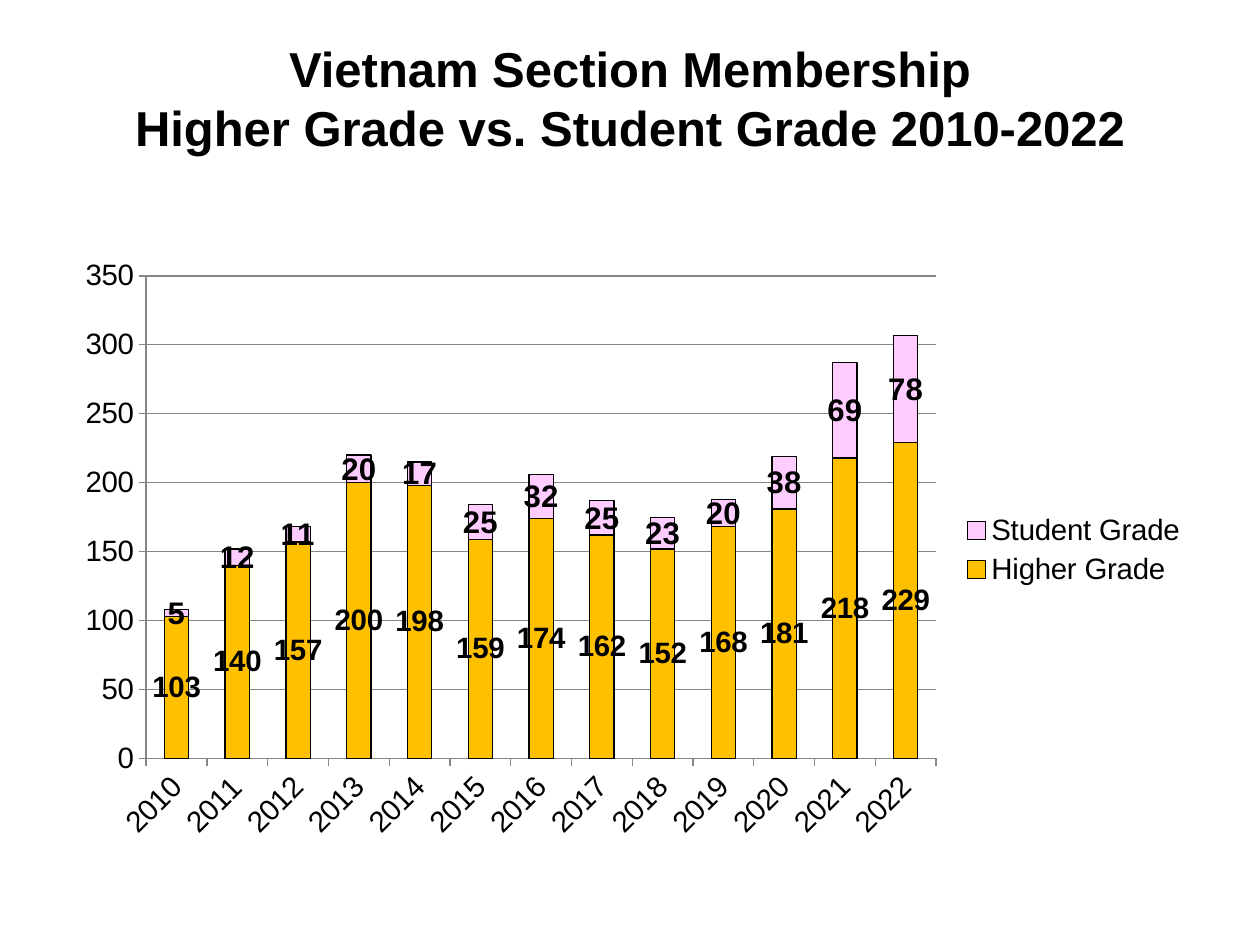
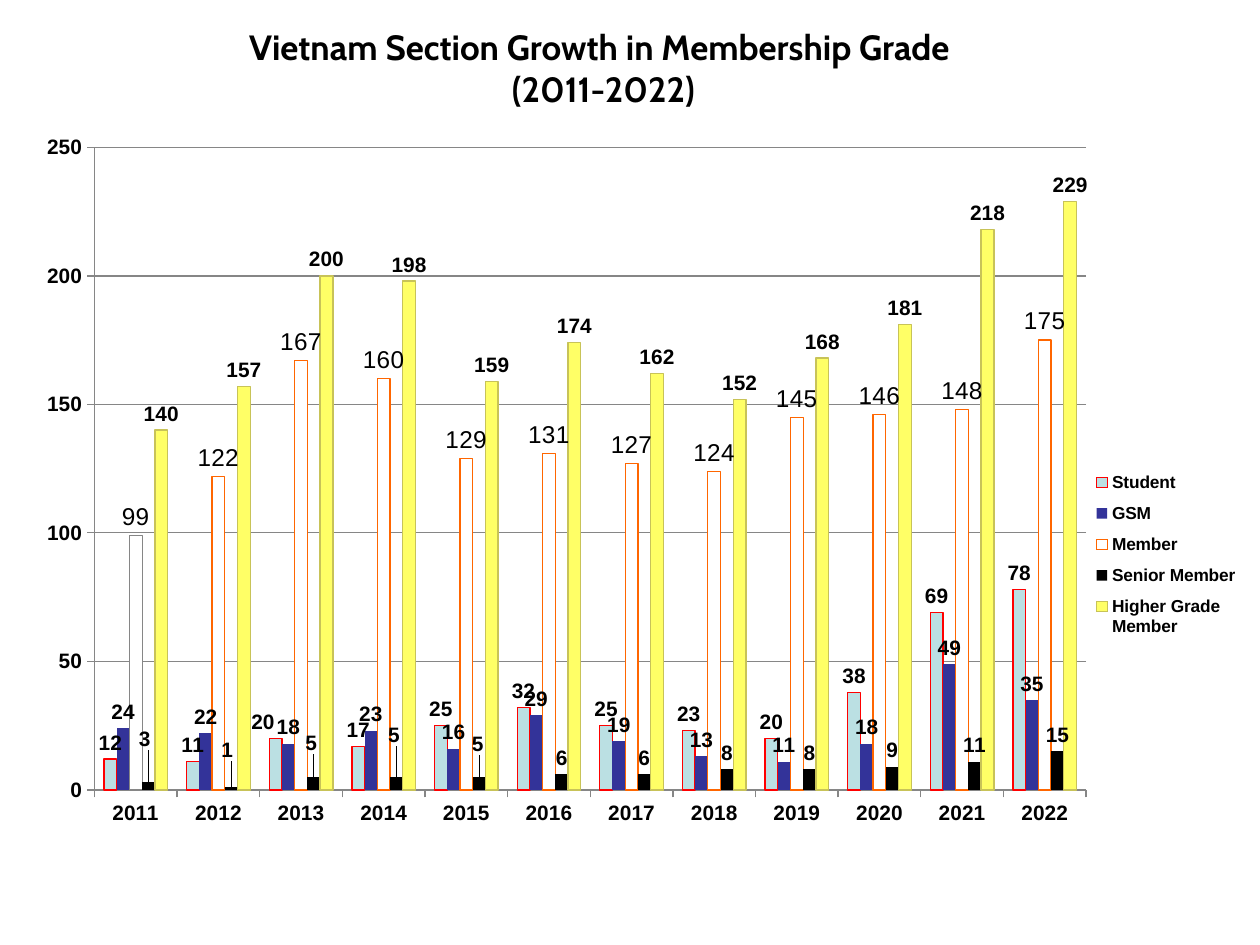
from dataclasses import dataclass

from lxml import etree
from pptx import Presentation
from pptx import util as u
from pptx.chart.data import CategoryChartData
from pptx.dml.color import RGBColor
from pptx.enum import chart as charts, text
from pptx.oxml.ns import qn


@dataclass(frozen=True)
class Theme:
    ink: str = "000000"
    axis: str = "868686"
    title_font: str = "Arial"
    growth_font: str = "Cabin"
    body_font: str = "Arial"
    title_size: float = 28
    growth_title_size: float = 20
    chart_size: float = 16.8
    student_size: float = 17.8
    growth_size: float = 11.9
    member_size: float = 13.9
    legend_size: float = 9.9
    orange: str = "FFC000"
    pink: str = "FFCCFF"
    aqua: str = "BBE0E3"
    red: str = "FF0000"
    indigo: str = "333399"
    white: str = "FFFFFF"
    rust: str = "FF6600"
    yellow: str = "FFFF66"
    olive: str = "C8C358"


@dataclass(frozen=True)
class Bars:
    name: str
    values: list
    fill: str
    label_size: float
    outline: str = ""
    bold: bool = True


THEME = Theme()
SPLIT_BOX = (0.5, 1.97, 9.02, 4.79)
GROWTH_BOX = (-0.25, 1, 10.42, 6.25)
STUDENTS = [5, 12, 11, 20, 17, 25, 32, 25, 23, 20, 38, 69, 78]
HIGHER = [103, 140, 157, 200, 198, 159, 174, 162, 152, 168, 181, 218, 229]
GSM = [24, 22, 18, 23, 16, 29, 19, 13, 11, 18, 49, 35]
MEMBERS = [99, 122, 167, 160, 129, 131, 127, 124, 145, 146, 148, 175]
SENIORS = [3, 1, 5, 5, 5, 6, 6, 8, 8, 9, 11, 15]


def set_font(font, size, bold=False, name=THEME.body_font):
    font.size = u.Pt(size)
    font.bold = bold
    font.name = name
    font.color.rgb = RGBColor.from_string(THEME.ink)


def set_fill(fill, color):
    fill.solid()
    fill.fore_color.rgb = RGBColor.from_string(color)


def set_line(line, color):
    line.color.rgb = RGBColor.from_string(color)
    line.width = u.Pt(0.75)


def add_title(page, box, lines, size, font_name):
    title = page.shapes.add_textbox(*map(u.Inches, box))
    frame = title.text_frame
    frame.word_wrap = True
    frame.vertical_anchor = text.MSO_ANCHOR.MIDDLE
    para = frame.paragraphs[0]
    para.alignment = text.PP_ALIGN.CENTER
    for index, line in enumerate(lines):
        if index:
            para.add_line_break()
        span = para.add_run()
        span.text = line
        set_font(span.font, size, True, font_name)


def make_layout(box, place, inner=False):
    """Turn inches (x, y and perhaps w, h) inside a chart box into a manual layout."""
    layout = etree.Element(qn("c:layout"))
    manual = etree.SubElement(layout, qn("c:manualLayout"))
    if inner:
        etree.SubElement(manual, qn("c:layoutTarget")).set("val", "inner")
    if len(place) == 4:
        for side in "xy":
            etree.SubElement(manual, qn(f"c:{side}Mode")).set("val", "edge")
    for side, length, whole in zip("xywh", place, box[2:] * 2):
        etree.SubElement(manual, qn(f"c:{side}")).set("val", str(length / whole))
    return layout


def drop_layout(element):
    for old in element.findall(qn("c:layout")):
        element.remove(old)


def place_plot(chart, box, place):
    area = chart.plots[0]._element.getparent()
    drop_layout(area)
    area.insert(0, make_layout(box, place, inner=True))


def place_legend(chart, box, place):
    element = chart.legend._element
    drop_layout(element)
    element.find(qn("c:legendPos")).addnext(make_layout(box, place))


def shift_label(series, index, size, box, offset):
    """Move one value label by an offset in inches."""
    label = series.points[index].data_label
    set_font(label.font, size, True)
    label.position = charts.XL_LABEL_POSITION.OUTSIDE_END
    label._dLbl.find(qn("c:idx")).addnext(make_layout(box, offset))


def style_axis(axis, size, bold):
    set_font(axis.tick_labels.font, size, bold)
    set_line(axis.format.line, THEME.axis)
    axis.major_tick_mark = charts.XL_TICK_MARK.OUTSIDE
    axis.minor_tick_mark = charts.XL_TICK_MARK.NONE


def style_series(series, bars, label_position):
    set_fill(series.format.fill, bars.fill)
    series.invert_if_negative = False
    if bars.outline:
        set_line(series.format.line, bars.outline)
    labels = series.data_labels
    labels.show_value = True
    labels.position = label_position
    set_font(labels.font, bars.label_size, bars.bold)
    for leader in labels._element.findall(qn("c:showLeaderLines")):
        labels._element.remove(leader)


def add_columns(page, box, kind, years, groups, top, size, legend_size, bold=False):
    stacked = kind == charts.XL_CHART_TYPE.COLUMN_STACKED
    places = charts.XL_LABEL_POSITION
    data = CategoryChartData()
    data.categories = [str(year) for year in years]
    for bars in groups:
        data.add_series(bars.name, bars.values)
    chart = page.shapes.add_chart(kind, *map(u.Inches, box), data).chart
    chart.has_title = False
    set_font(chart.font, size)
    plot = chart.plots[0]
    plot.gap_width = 150
    plot.overlap = 100 if stacked else 0
    plot.vary_by_categories = False
    for series, bars in zip(plot.series, groups):
        style_series(series, bars, places.CENTER if stacked else places.OUTSIDE_END)
    for axis in (chart.category_axis, chart.value_axis):
        style_axis(axis, size, bold)
    values = chart.value_axis
    values.minimum_scale, values.maximum_scale, values.major_unit = 0, top, 50
    values.has_major_gridlines = True
    set_line(values.major_gridlines.format.line, THEME.axis)
    chart.has_legend = True
    chart.legend.position = charts.XL_LEGEND_POSITION.RIGHT
    chart.legend.include_in_layout = False
    set_font(chart.legend.font, legend_size, bold)
    return chart


def build_grade_split(page):
    add_title(page, (0.5, 0.3, 9, 0.95),
              ["Vietnam Section Membership", "Higher Grade vs. Student Grade 2010-2022"],
              THEME.title_size, THEME.title_font)
    groups = [
        Bars("Higher Grade", HIGHER, THEME.orange, THEME.chart_size, THEME.ink),
        Bars("Student Grade", STUDENTS, THEME.pink, THEME.student_size, THEME.ink),
    ]
    chart = add_columns(page, SPLIT_BOX, charts.XL_CHART_TYPE.COLUMN_STACKED,
                        range(2010, 2023), groups, 350, THEME.chart_size, THEME.chart_size)
    place_plot(chart, SPLIT_BOX, (0.66, 0.22, 6.27, 3.83))
    year_text = chart.category_axis._element.find(qn("c:txPr"))
    year_text.find(qn("a:bodyPr")).set("rot", str(-45 * 60000))


def build_grade_growth(page):
    add_title(page, (0.5, 0.17, 8.58, 0.73),
              ["Vietnam Section Growth in Membership Grade ", "(2011-2022)"],
              THEME.growth_title_size, THEME.growth_font)
    size = THEME.growth_size
    groups = [
        Bars("Student", STUDENTS[1:], THEME.aqua, size, THEME.red),
        Bars("GSM", GSM, THEME.indigo, size),
        Bars("Member", MEMBERS, THEME.white, THEME.member_size, THEME.rust, bold=False),
        Bars("Senior Member", SENIORS, THEME.ink, size),
        Bars("Higher Grade Member", HIGHER[1:], THEME.yellow, size, THEME.olive),
    ]
    chart = add_columns(page, GROWTH_BOX, charts.XL_CHART_TYPE.COLUMN_CLUSTERED,
                        range(2011, 2023), groups, 250, size, THEME.legend_size, bold=True)
    chart.value_axis.tick_labels.number_format = "#,##0"
    chart.value_axis.tick_labels.number_format_is_linked = False
    place_plot(chart, GROWTH_BOX, (1, 0.17, 7.87, 5.1))
    place_legend(chart, GROWTH_BOX, (8.88, 2.66, 1.25, 1.48))
    students, _, members, seniors, _ = chart.plots[0].series
    first_member = members.points[0].format
    set_fill(first_member.fill, THEME.white)
    set_line(first_member.line, THEME.axis)
    shift_label(students, 2, size, GROWTH_BOX, (-0.1, 0))
    senior_offsets = [(-0.03, -0.21), (-0.03, -0.17), (-0.02, -0.14),
                      (-0.02, -0.2), (-0.01, -0.13)]
    for index, offset in enumerate(senior_offsets):
        shift_label(seniors, index, size, GROWTH_BOX, offset)


def main():
    deck = Presentation()
    deck.slide_width, deck.slide_height = u.Inches(10), u.Inches(7.5)
    for build in (build_grade_split, build_grade_growth):
        build(deck.slides.add_slide(deck.slide_layouts[6]))
    deck.save("out.pptx")


if __name__ == "__main__":
    main()
